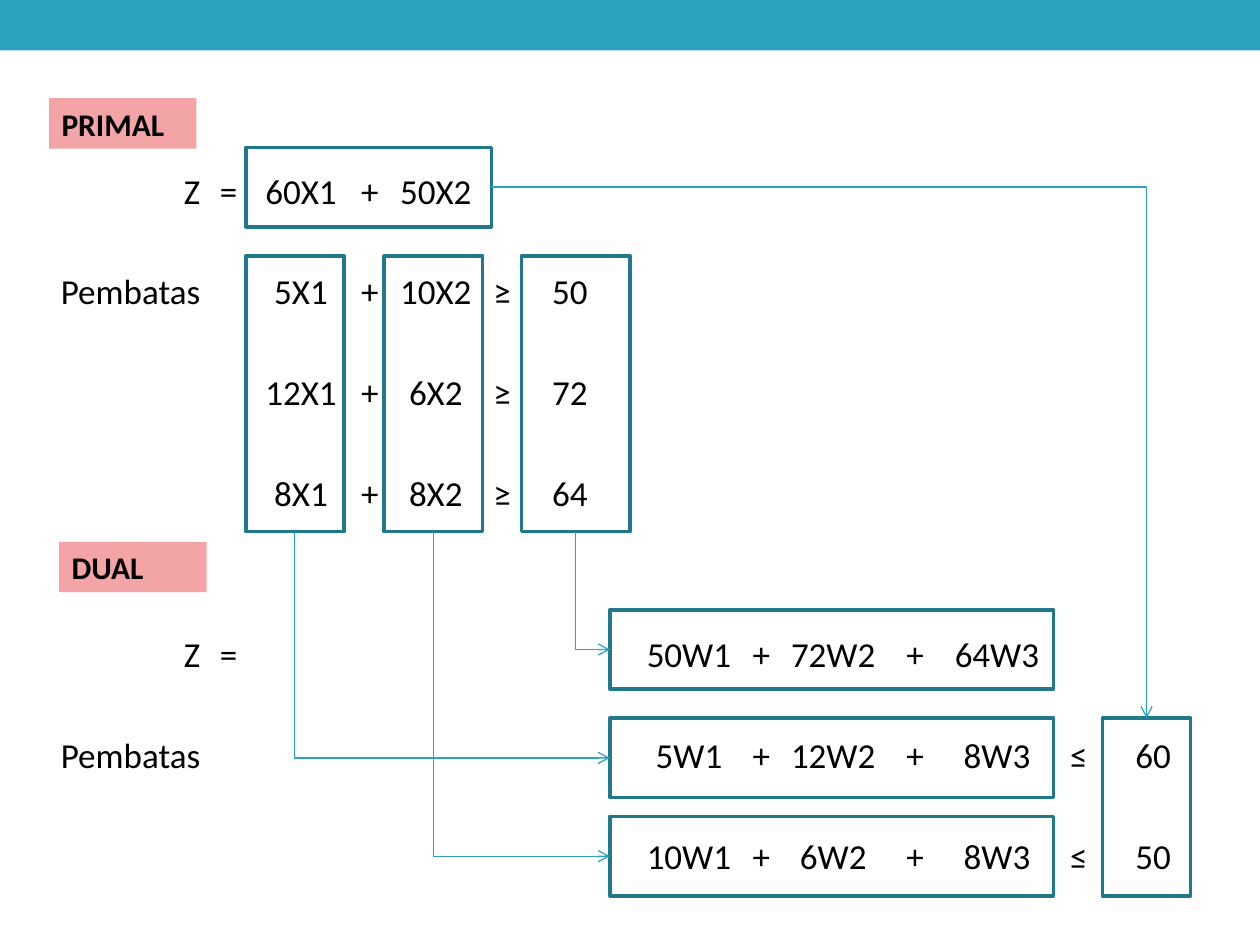
from dataclasses import dataclass
from typing import Optional

from lxml import etree
from pptx import Presentation
from pptx.dml.color import RGBColor
from pptx.enum.shapes import MSO_CONNECTOR, MSO_SHAPE
from pptx.enum.text import MSO_ANCHOR, PP_ALIGN
from pptx.oxml.ns import qn
from pptx.util import Inches, Pt

ELBOW = MSO_CONNECTOR.ELBOW
RECT = MSO_SHAPE.RECTANGLE
MIDDLE = MSO_ANCHOR.MIDDLE
LEFT, CENTER, RIGHT = PP_ALIGN.LEFT, PP_ALIGN.CENTER, PP_ALIGN.RIGHT
LEFT_SITE, TOP_SITE, BOTTOM_SITE, RIGHT_SITE = 1, 0, 2, 3
NO_STYLE = "{2D5ABB26-0587-4C30-8999-92F81FD0307C}"


@dataclass(frozen=True)
class Theme:
    font: str = "Calibri"
    text: RGBColor = RGBColor(0x00, 0x00, 0x00)
    accent: RGBColor = RGBColor(0x2D, 0xA2, 0xBF)
    frame: RGBColor = RGBColor(0x21, 0x78, 0x8D)
    label: RGBColor = RGBColor(0xF2, 0xA4, 0xA7)
    body_size: int = 20
    label_size: int = 18
    gap_size: int = 10
    frame_width: float = 2.08
    arrow_width: float = 0.75


@dataclass(frozen=True)
class Box:
    left: float
    top: float
    width: float
    height: float


@dataclass(frozen=True)
class Arrow:
    start: str
    end: str
    down_first: bool = True


@dataclass(frozen=True)
class Equation:
    row: int
    heading: str
    first_col: int
    terms: str


THEME = Theme()
BAND = Box(0, 0, 10, 0.4)
LABELS = {"PRIMAL": Box(0.39, 0.78, 1.17, 0.4), "DUAL": Box(0.47, 4.3, 1.17, 0.4)}
FRAMES = {
    "primal objective": Box(1.95, 1.17, 1.95, 0.63),
    "dual objective": Box(4.84, 4.84, 3.52, 0.63),
    "dual row 1": Box(4.84, 5.7, 3.52, 0.63),
    "dual row 2": Box(4.84, 6.48, 3.52, 0.63),
    "primal limits": Box(4.14, 2.03, 0.86, 2.19),
    "dual limits": Box(8.75, 5.7, 0.7, 1.41),
    "X2 column": Box(3.05, 2.03, 0.78, 2.19),
    "X1 column": Box(1.95, 2.03, 0.78, 2.19),
}
ARROWS = [
    Arrow("primal objective", "dual limits", down_first=False),
    Arrow("primal limits", "dual objective"),
    Arrow("X1 column", "dual row 1"),
    Arrow("X2 column", "dual row 2"),
]
TABLE_LEFT, TABLE_TOP = 0.47, 1.29
COLUMNS = [1.13, 0.43, 0.72, 0.37, 0.68, 0.37, 0.71, 0.23,
           0.72, 0.43, 0.71, 0.59, 0.71, 0.59, 0.59]
ROW, GAP, SECTION_GAP = 0.46, 0.34, 0.82
ROWS = [ROW, GAP] * 3 + [ROW, SECTION_GAP] + [ROW, GAP] * 2 + [ROW]
EQUATIONS = [
    Equation(0, "Z =", 2, "60X1 + 50X2"),
    Equation(2, "Pembatas", 2, "5X1 + 10X2 ≥ 50"),
    Equation(4, "", 2, "12X1 + 6X2 ≥ 72"),
    Equation(6, "", 2, "8X1 + 8X2 ≥ 64"),
    Equation(8, "Z =", 8, "50W1 + 72W2 + 64W3"),
    Equation(10, "Pembatas", 8, "5W1 + 12W2 + 8W3 ≤ 60"),
    Equation(12, "", 8, "10W1 + 6W2 + 8W3 ≤ 50"),
]


def put_text(tf, text: str, *, size: int, bold: bool = False, align=LEFT) -> None:
    p = tf.paragraphs[0]
    p.alignment = align
    r = p.add_run()
    r.text = text
    r.font.name = THEME.font
    r.font.size = Pt(size)
    r.font.bold = bold
    r.font.color.rgb = THEME.text


def add_box(shapes, box: Box, *, fill: Optional[RGBColor] = None,
            line: Optional[RGBColor] = None):
    s = shapes.add_shape(RECT, Inches(box.left), Inches(box.top),
                         Inches(box.width), Inches(box.height))
    s.shadow.inherit = False
    if fill is None:
        s.fill.background()
    else:
        s.fill.solid()
        s.fill.fore_color.rgb = fill
    if line is None:
        s.line.fill.background()
    else:
        s.line.color.rgb = line
        s.line.width = Pt(THEME.frame_width)
    return s


def add_label(shapes, text: str, box: Box) -> None:
    tf = add_box(shapes, box, fill=THEME.label).text_frame
    tf.word_wrap = True
    put_text(tf, text, size=THEME.label_size, bold=True)


def add_equations(shapes) -> None:
    frame = shapes.add_table(len(ROWS), len(COLUMNS), Inches(TABLE_LEFT),
                             Inches(TABLE_TOP), Inches(sum(COLUMNS)), Inches(sum(ROWS)))
    table = frame.table
    table.first_row = table.horz_banding = False
    table._tbl.tblPr.find(qn("a:tableStyleId")).text = NO_STYLE
    for column, width in zip(table.columns, COLUMNS):
        column.width = Inches(width)
    for row, height in zip(table.rows, ROWS):
        row.height = Inches(height)

    texts = {}
    for eq in EQUATIONS:
        for first, words in ((0, eq.heading), (eq.first_col, eq.terms)):
            for col, word in enumerate(words.split(), first):
                texts[eq.row, col] = word

    for row in range(len(ROWS)):
        for col in range(len(COLUMNS)):
            cell = table.cell(row, col)
            cell.fill.background()
            cell.vertical_anchor = MIDDLE
            cell.margin_left = cell.margin_right = cell.margin_top = Inches(0.01)
            cell.margin_bottom = 0
            if (row, col) in texts:
                put_text(cell.text_frame, texts[row, col], size=THEME.body_size,
                         align=CENTER if col else RIGHT)
            else:
                p = cell.text_frame.paragraphs[0]._p
                etree.SubElement(p, qn("a:endParaRPr"), sz=str(THEME.gap_size * 100))


def add_arrow(shapes, arrow: Arrow, frames: dict) -> None:
    s = shapes.add_connector(ELBOW, 0, 0, 0, 0)
    s.begin_connect(frames[arrow.start], BOTTOM_SITE if arrow.down_first else RIGHT_SITE)
    s.end_connect(frames[arrow.end], LEFT_SITE if arrow.down_first else TOP_SITE)
    s.line.color.rgb = THEME.accent
    s.line.width = Pt(THEME.arrow_width)
    props = s._element.spPr
    props.find(qn("a:prstGeom")).set("prst", "bentConnector2")
    if arrow.down_first:
        left, top, width, height = s.left, s.top, s.width, s.height
        s.left = left + (width - height) // 2
        s.top = top + (height - width) // 2
        s.width, s.height = height, width
        xfrm = props.find(qn("a:xfrm"))
        xfrm.set("rot", str(270 * 60000))
        xfrm.set("flipH", "1")
    etree.SubElement(props.find(qn("a:ln")), qn("a:tailEnd"), type="arrow")
    etree.SubElement(props, qn("a:effectLst"))


def main() -> None:
    prs = Presentation()
    prs.slide_width, prs.slide_height = Inches(10), Inches(7.5)
    shapes = prs.slides.add_slide(prs.slide_layouts[6]).shapes
    add_box(shapes, BAND, fill=THEME.accent)
    add_equations(shapes)
    frames = {name: add_box(shapes, box, line=THEME.frame) for name, box in FRAMES.items()}
    for arrow in ARROWS:
        add_arrow(shapes, arrow, frames)
    for text, box in LABELS.items():
        add_label(shapes, text, box)
    prs.save("out.pptx")


if __name__ == "__main__":
    main()
